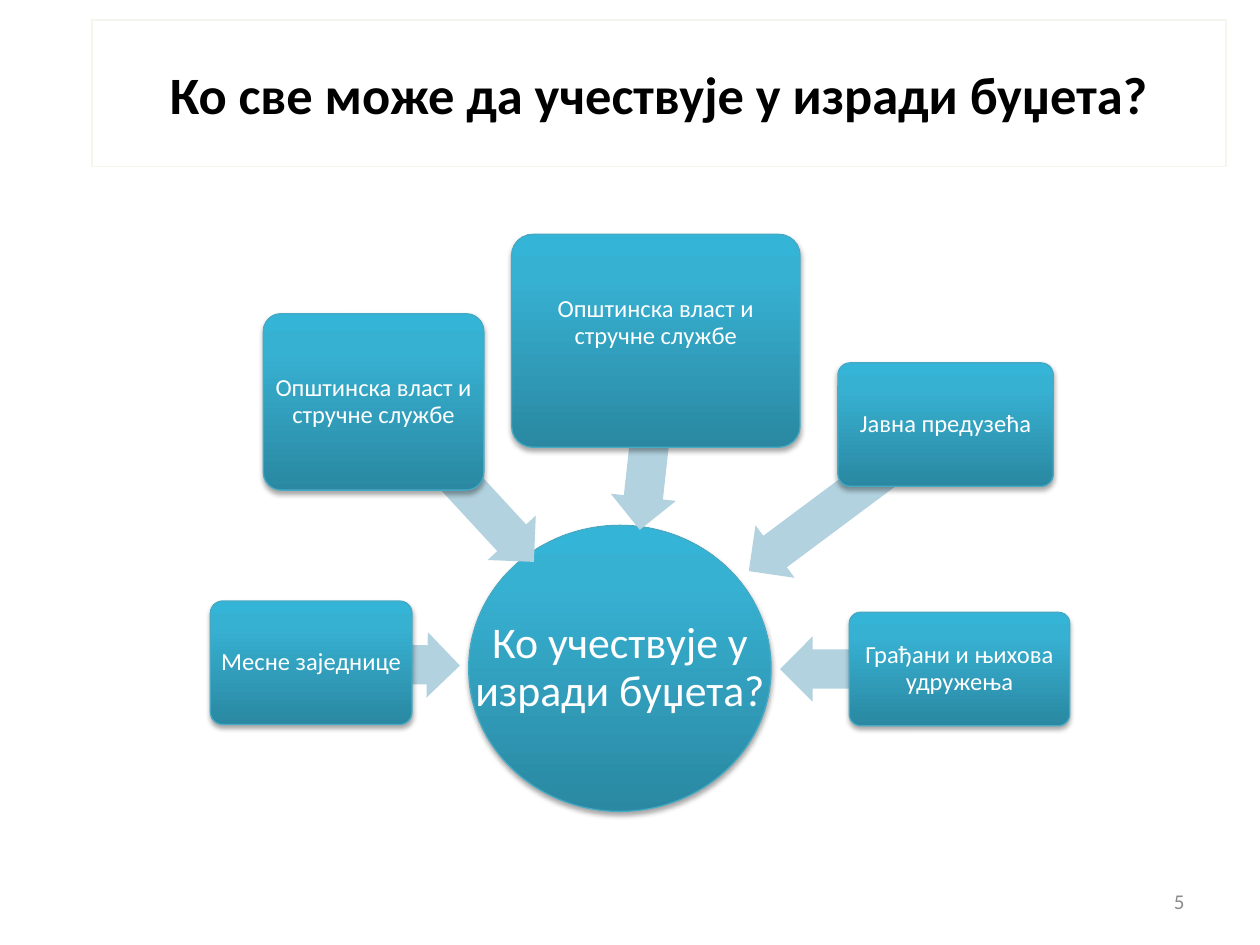
from pptx import Presentation
from pptx.dml.color import RGBColor
from pptx.enum.shapes import MSO_SHAPE
from pptx.enum.text import MSO_ANCHOR, PP_ALIGN
from pptx.oxml import parse_xml
from pptx.oxml.ns import nsdecls
from pptx.util import Inches, Pt

COLUMNS, ROWS = 100, 75
SLIDE_WIDTH, SLIDE_HEIGHT = Inches(10), Inches(7.5)
BLACK = RGBColor(0x00, 0x00, 0x00)
WHITE = RGBColor(0xFF, 0xFF, 0xFF)
GRAY = RGBColor(0x8C, 0x8C, 0x8C)
TITLE_EDGE = RGBColor(0xF5, 0xF4, 0xED)
TEAL_EDGE = RGBColor(0x46, 0xAA, 0xC5)
ARROW_BLUE = RGBColor(0xB2, 0xD2, 0xDF)
TEAL_STOPS = (
    (0, RGBColor(0x2A, 0x88, 0xA2)),
    (80, RGBColor(0x37, 0xB1, 0xD2)),
    (100, RGBColor(0x34, 0xB4, 0xD6)),
)

TITLE_BOX = (7.3, 1.6, 90, 11.6)
NUMBER_BOX = (71.7, 69.5, 23.3, 4)
DIAGRAM_BOX = (16.7, 18.6, 68.2, 45.8)
HUB = ("Ко учествује у изради буџета?", (20.5, 23.1, 24, 22.7))
ARROW_THICKNESS = 5.2
TIGHT, RAISED = 0.03, 0.31
AUTHORITIES = "Општинска власт и стручне службе"
PARTICIPANTS = (
    ("Месне заједнице", (0, 29.1, 16, 9.8), TIGHT, (8, 31.5, 11.8), 181.2),
    (AUTHORITIES, (4.2, 6.3, 17.5, 14), TIGHT, (12, 17.4, 16.3), 227.3),
    (AUTHORITIES, (23.9, 0, 22.9, 16.9), RAISED, (27.4, 13.4, 15), 276.3),
    ("Јавна предузећа", (49.8, 10.2, 17.1, 9.8), TIGHT, (40.8, 18.3, 19.5), 323.3),
    ("Грађани и њихова удружења", (50.7, 30, 17.5, 9), TIGHT, (45.2, 31.9, 14.2), 0),
)


def place(box, origin=(0, 0)):
    """Turn a box in grid columns and rows into slide lengths."""
    left, top, width, height = box
    column, row = SLIDE_WIDTH / COLUMNS, SLIDE_HEIGHT / ROWS
    return (
        int((origin[0] + left) * column),
        int((origin[1] + top) * row),
        int(width * column),
        int(height * row),
    )


def apply(target, values):
    """Set every attribute named in a dict of format values."""
    for name, value in values.items():
        setattr(target, name, value)


def write(shape, text, size, color, align=PP_ALIGN.CENTER, bold=False,
          spacing=1.0, frame_format=None):
    """Write one formatted, vertically centred paragraph in a shape."""
    frame = shape.text_frame
    apply(frame, {"word_wrap": True, "vertical_anchor": MSO_ANCHOR.MIDDLE,
                  **(frame_format or {})})
    paragraph = frame.paragraphs[0]
    apply(paragraph, {"alignment": align, "line_spacing": spacing})
    run = paragraph.add_run()
    run.text = text
    apply(run.font, {"name": "Calibri", "size": Pt(size), "bold": bold})
    run.font.color.rgb = color


def insets(side, bottom):
    """Return text margins with equal sides and a chosen bottom."""
    return {"margin_left": Inches(side), "margin_right": Inches(side),
            "margin_top": Inches(side), "margin_bottom": Inches(bottom)}


def add_glossy(slide, kind, position):
    """Add a teal shape with a vertical gradient and a soft shadow."""
    shape = slide.shapes.add_shape(kind, *position)
    apply(shape.line, {"width": Pt(0.75)})
    shape.line.color.rgb = TEAL_EDGE
    stops = "".join(
        f'<a:gs pos="{share * 1000}"><a:srgbClr val="{color}"/></a:gs>'
        for share, color in TEAL_STOPS
    )
    shape.element.spPr.insert(2, parse_xml(
        f'<a:gradFill {nsdecls("a")} rotWithShape="1"><a:gsLst>{stops}</a:gsLst>'
        '<a:lin ang="16200000" scaled="0"/></a:gradFill>'))
    shape.element.spPr.append(parse_xml(
        f'<a:effectLst {nsdecls("a")}><a:outerShdw blurRad="{Pt(3.1)}" '
        f'dist="{Pt(1.8)}" dir="5400000" rotWithShape="0"><a:srgbClr val="{BLACK}">'
        '<a:alpha val="35000"/></a:srgbClr></a:outerShdw></a:effectLst>'))
    return shape


def add_title(slide, box):
    """Format the title placeholder inside the box."""
    title = slide.shapes.title
    edges = ("left", "top", "width", "height")
    apply(title, dict(zip(edges, place(box))))
    title.line.color.rgb = TITLE_EDGE
    title.line.width = Pt(0.75)
    write(title, "Ко све може да учествује у изради буџета?", 30, BLACK, bold=True)


def add_number(slide, box):
    """Place the page number at the right of the box."""
    number = slide.shapes.add_textbox(*place(box))
    write(number, "5", 12, GRAY, align=PP_ALIGN.RIGHT)


def add_hub(slide, origin):
    """Draw the central circle with its question across the full width."""
    question, box = HUB
    position = place(box, origin)
    add_glossy(slide, MSO_SHAPE.OVAL, position)
    label = slide.shapes.add_textbox(*position)
    write(label, question, 25, WHITE, spacing=0.9, frame_format=insets(0.02, 0.02))


def add_arrow(slide, box, origin, angle):
    """Draw a block arrow turned toward the hub."""
    arrow = slide.shapes.add_shape(
        MSO_SHAPE.LEFT_ARROW, *place((*box, ARROW_THICKNESS), origin))
    arrow.adjustments[0], arrow.adjustments[1] = 0.6, 0.5
    arrow.rotation = angle
    arrow.shadow.inherit = False
    arrow.fill.solid()
    arrow.fill.fore_color.rgb = ARROW_BLUE
    arrow.line.fill.background()


def add_diagram(slide, box):
    """Draw the hub, then each participant with its arrow, inside the box."""
    origin = box[:2]
    add_hub(slide, origin)
    for name, card_box, bottom, arrow_box, angle in PARTICIPANTS:
        add_arrow(slide, arrow_box, origin, angle)
        card = add_glossy(slide, MSO_SHAPE.ROUNDED_RECTANGLE, place(card_box, origin))
        card.adjustments[0] = 0.1
        write(card, name, 14, WHITE, spacing=0.9, frame_format=insets(TIGHT, bottom))


def main():
    """Build and save the slide."""
    deck = Presentation()
    apply(deck, {"slide_width": SLIDE_WIDTH, "slide_height": SLIDE_HEIGHT})
    slide = deck.slides.add_slide(deck.slide_layouts.get_by_name("Title Only"))
    add_title(slide, TITLE_BOX)
    add_number(slide, NUMBER_BOX)
    add_diagram(slide, DIAGRAM_BOX)
    deck.save("out.pptx")


if __name__ == "__main__":
    main()
